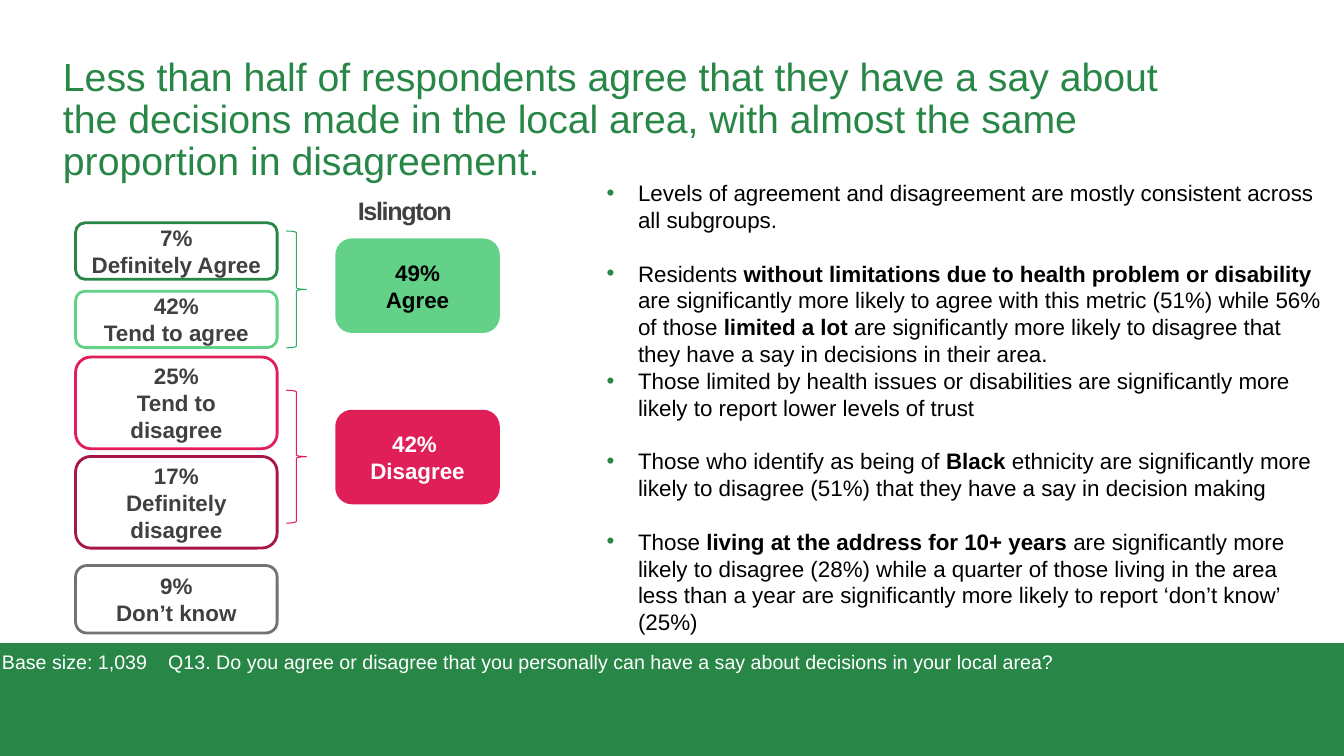
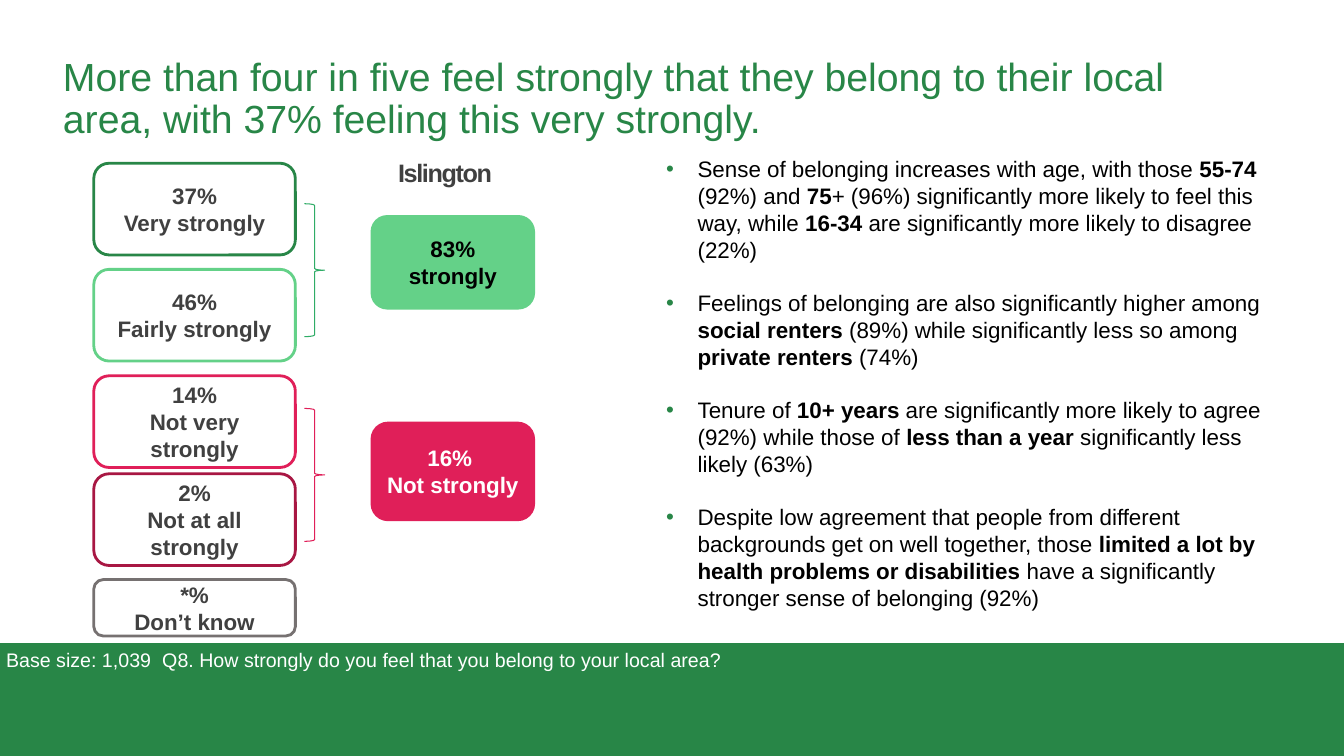
from lxml.etree import SubElement as Sub
from pptx import Presentation
from pptx.dml.color import RGBColor as RGB
from pptx.enum.shapes import MSO_SHAPE as Kind
from pptx.enum.text import MSO_ANCHOR as Anchor, PP_ALIGN as Align
from pptx.oxml.ns import qn
from pptx.util import Pt

GREEN = RGB(0x28, 0x86, 0x47)
LEAF = RGB(0x2F, 0xAC, 0x66)
MINT = RGB(0x64, 0xD1, 0x88)
ROSE = RGB(0xE0, 0x1F, 0x59)
WINE = RGB(0xA8, 0x17, 0x43)
GREY = RGB(0x76, 0x71, 0x71)
DARK = RGB(0x40, 0x40, 0x40)
BLACK = RGB(0, 0, 0)
WHITE = RGB(0xFF, 0xFF, 0xFF)
EDGES = GREEN, MINT, ROSE, WINE, GREY
WIDE, HIGH = 960, 540
FOOT = 459.4


class Deck:
    """Holds the shared style and the slide being drawn."""

    font = "Arial"

    def __init__(self):
        self.prs = Presentation()
        self.prs.slide_width, self.prs.slide_height = Pt(WIDE), Pt(HIGH)

    def page(self, title):
        self.slide = self.prs.slides.add_slide(self.prs.slide_layouts[6])
        self.shape(Kind.RECTANGLE, (0, FOOT, WIDE, HIGH - FOOT), GREEN)
        frame = self.text((45, 41, 828, 83.5), (0, 0))
        para = frame.paragraphs[0]
        para.line_spacing = 0.9
        self.run(para, title, 28, GREEN)

    def shape(self, kind, area, fill=None, edge=None, width=2):
        item = self.slide.shapes.add_shape(kind, *map(Pt, area))
        item.shadow.inherit = False
        if fill is None:
            item.fill.background()
        else:
            item.fill.solid()
            item.fill.fore_color.rgb = fill
        if edge is None:
            item.line.fill.background()
        else:
            item.line.color.rgb = edge
            item.line.width = Pt(width)
        return item

    def text(self, area, pad=(7.2, 3.6), wrap=True):
        frame = self.slide.shapes.add_textbox(*map(Pt, area)).text_frame
        frame.word_wrap = wrap
        frame.margin_left = frame.margin_right = Pt(pad[0])
        frame.margin_top = frame.margin_bottom = Pt(pad[1])
        return frame

    def run(self, para, words, size, color, bold=False):
        run = para.add_run()
        run.text = words
        font = run.font
        font.name, font.size, font.bold = self.font, Pt(size), bold
        font.color.rgb = color
        return run

    def box(self, area, lines, edge, fill=None, color=DARK):
        frame = self.shape(Kind.ROUNDED_RECTANGLE, area, fill, edge).text_frame
        frame.word_wrap = True
        frame.vertical_anchor = Anchor.MIDDLE
        for num, line in enumerate(lines):
            para = frame.add_paragraph() if num else frame.paragraphs[0]
            para.alignment = Align.CENTER
            self.run(para, line, 16, color, True)

    def stack(self, left, rows):
        for (top, high, *lines), edge in zip(rows, EDGES):
            self.box((left, top, 144, high), lines, edge)

    def sums(self, left, rows):
        for (top, high, *lines), fill, color in zip(rows, (MINT, ROSE), (BLACK, WHITE)):
            self.box((left, top, 115.5, high), lines, fill, fill, color)

    def braces(self, left, rows):
        for (top, high), edge in zip(rows, (LEAF, ROSE)):
            self.shape(Kind.RIGHT_BRACE, (left, top, 14.4, high), None, edge, 0.75)

    def label(self, area, words):
        para = self.text(area, (0, 3)).paragraphs[0]
        para.alignment = Align.CENTER
        para.line_spacing = 0.8
        run = self.run(para, words, 18, DARK, True)
        run.font._element.set("spc", "-100")

    def points(self, area, items):
        frame = self.text(area)
        for num, (gap, words) in enumerate(items):
            para = frame.add_paragraph() if num else frame.paragraphs[0]
            self.dot(para)
            if gap:
                para.space_before = Pt(gap)
            for part, piece in enumerate(words.split("|")):
                if piece:
                    self.run(para, piece, 16, BLACK, part % 2 == 1)

    def dot(self, para):
        props = para._p.get_or_add_pPr()
        props.set("marL", str(Pt(22.5)))
        props.set("indent", str(-Pt(22.5)))
        tint = Sub(props, qn("a:buClr"))
        Sub(tint, qn("a:srgbClr")).set("val", str(GREEN))
        Sub(props, qn("a:buFont")).set("typeface", self.font)
        Sub(props, qn("a:buChar")).set("char", "•")

    def note(self, left, top, words):
        frame = self.text((left, top, WIDE - left, 24.5), (0, 3.6), False)
        self.run(frame.paragraphs[0], words, 14, WHITE)


def main():
    deck = Deck()
    gap = 19

    deck.page("Less than half of respondents agree that they have a say about the "
              "decisions made in the local area, with almost the same proportion in "
              "disagreement.")
    deck.label((247.7, 140.4, 82.8, 31.7), "Islington")
    deck.stack(54, [
        (159.2, 40.3, "7%", "Definitely Agree"),
        (208, 40.3, "42%", "Tend to agree"),
        (255, 65.5, "25%", "Tend to disagree"),
        (326, 65.5, "17%", "Definitely disagree"),
        (404, 48.2, "9%", "Don’t know"),
    ])
    deck.sums(240.5, [
        (171.3, 65.5, "49%", "Agree"),
        (293.7, 65.5, "42% ", "Disagree"),
    ])
    deck.braces(204.5, [(165, 83.5), (278.7, 95)])
    deck.points((426.2, 124.6, 525.6, 356.4), [
        (0, "Levels of agreement and disagreement are mostly consistent across all "
            "subgroups."),
        (gap, "Residents |without limitations due to health problem or disability "
              "|are significantly more likely to agree with this metric (51%) while "
              "56% of those |limited a lot| are significantly more likely to disagree "
              "that they have a say in decisions in their area."),
        (0, "Those limited by health issues or disabilities are significantly more "
            "likely to report lower levels of trust"),
        (gap, "Those who identify as being of |Black |ethnicity are significantly "
              "more likely to disagree (51%) that they have a say in decision making"),
        (gap, "Those |living at the address for 10+ years |are significantly more "
              "likely to disagree (28%) while a quarter of those living in the area "
              "less than a year are significantly more likely to report ‘don’t know’ "
              "(25%)"),
    ])
    deck.note(1.4, 460.8, "Base size: 1,039")
    deck.note(120.2, 460.4, "Q13. Do you agree or disagree that you personally can have "
              "a say about decisions in your local area?")

    deck.page("More than four in five feel strongly that they belong to their local "
              "area, with 37% feeling this very strongly.")
    deck.label((277.9, 113.8, 79.9, 26.6), "Islington")
    deck.stack(67, [
        (116.6, 65.5, "37%", "Very strongly"),
        (192.4, 65.5, "46%", "Fairly strongly"),
        (268.4, 65.5, "14%", "Not very strongly"),
        (338.4, 65.5, "2%", "Not at all strongly"),
        (414, 40.3, "*%", "Don’t know"),
    ])
    deck.sums(265.7, [
        (154.6, 65.5, "83%", "strongly"),
        (302.2, 69.1, "16% ", "Not strongly"),
    ])
    deck.braces(217.5, [(145.5, 95), (291.7, 95)])
    deck.points((468.7, 107.3, 445, 337), [
        (0, "Sense of belonging increases with age, with those |55-74| (92%) and "
            "|75|+ (96%) significantly more likely to feel this way, while |16-34| "
            "are significantly more likely to disagree (22%)"),
        (gap, "Feelings of belonging are also significantly higher among |social "
              "renters |(89%) while significantly less so among |private renters "
              "|(74%)"),
        (gap, "Tenure of |10+ years |are significantly more likely to agree (92%) "
              "while those of |less than a year |significantly less likely (63%)"),
        (gap, "Despite low agreement that people from different backgrounds get on "
              "well together, those |limited a lot by health problems or "
              "disabilities| have a significantly stronger sense of belonging (92%)"),
    ])
    deck.note(4.3, 459.4, "Base size: 1,039")
    deck.note(115.9, 459.4, "Q8. How strongly do you feel that you belong to your local "
              "area?")

    deck.prs.save("out.pptx")


if __name__ == "__main__":
    main()
